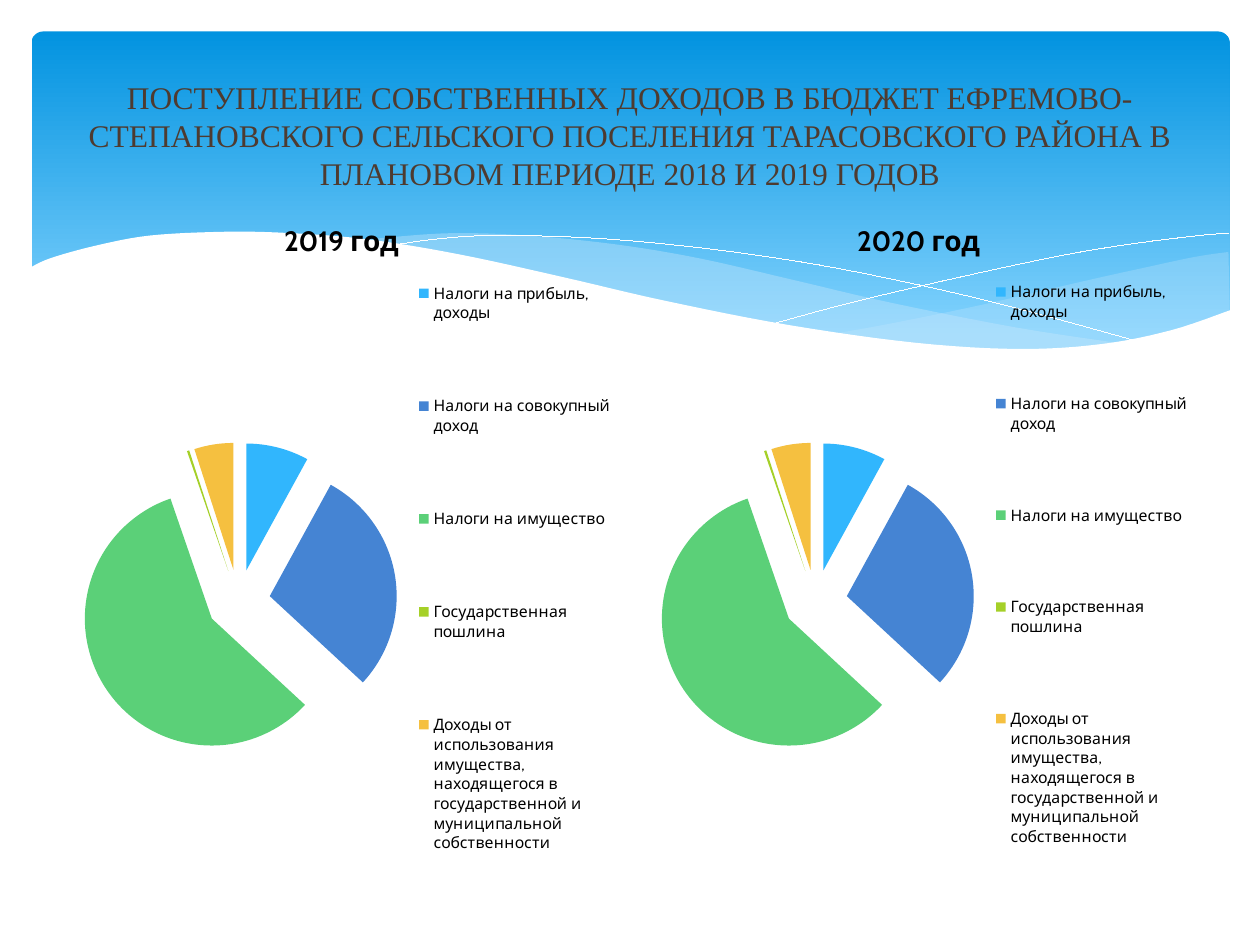
from collections import namedtuple
from lxml.etree import SubElement
from pptx import Presentation
from pptx.chart.data import CategoryChartData
from pptx.dml.color import RGBColor
from pptx.enum.chart import XL_CHART_TYPE as ChartType, XL_LEGEND_POSITION as LegendPosition
from pptx.enum.shapes import MSO_SHAPE as Shape
from pptx.enum.text import MSO_ANCHOR as Anchor, PP_ALIGN as Align
from pptx.oxml.ns import qn
from pptx.util import Inches, Pt

Box = namedtuple("Box", "left top width height")

COLUMNS = 1000
FINENESS = 100
SKY_TOP = RGBColor(0x02, 0x93, 0xE0)
SKY_BOTTOM = RGBColor(0x83, 0xD3, 0xFE)
MIST = RGBColor(0xC6, 0xE7, 0xFC)
WHITE = RGBColor(0xFF, 0xFF, 0xFF)
BLACK = RGBColor(0, 0, 0)
BROWN = RGBColor(0x4E, 0x3B, 0x30)
SLICE_COLORS = [
    RGBColor(0x31, 0xB6, 0xFD), RGBColor(0x45, 0x84, 0xD3), RGBColor(0x5B, 0xD0, 0x78),
    RGBColor(0xA5, 0xD0, 0x28), RGBColor(0xF5, 0xC0, 0x40),
]

TITLE = ("ПОСТУПЛЕНИЕ СОБСТВЕННЫХ ДОХОДОВ В БЮДЖЕТ ЕФРЕМОВО-СТЕПАНОВСКОГО СЕЛЬСКОГО "
         "ПОСЕЛЕНИЯ ТАРАСОВСКОГО РАЙОНА В ПЛАНОВОМ ПЕРИОДЕ 2018 И 2019 ГОДОВ")
INCOME = {
    "Налоги на прибыль, доходы": 8,
    "Налоги на совокупный доход": 29,
    "Налоги на имущество": 58,
    "Государственная пошлина": 0.3,
    "Доходы от использования имущества, находящегося в государственной и "
    "муниципальной собственности": 5,
}
TITLE_FORMAT = {"name": "Times New Roman", "size": Pt(18)}
CHART_FORMAT = {"name": "Cabin", "size": Pt(9), "bold": False}
YEAR_FORMAT = {"name": "Cabin", "size": Pt(16), "bold": True}
PLOT_SHARE = Box(0.03, 0.33, 0.57, 0.44)
LEGEND_SHARES = {
    "2019 год": Box(0.64, 0.02, 0.35, 0.97),
    "2020 год": Box(0.64, 0.02, 0.35, 0.96),
}

RIGHT_RIBBON = [
    [(952, 16), (925, 20), (883, 29), (838, 39), (756, 58), (683, 73), (638, 81)],
    [(638, 81), (696, 88), (758, 93), (812, 93), (866, 88), (912, 78), (953, 63)],
]
LEFT_RIBBON = [
    [(870, 89), (784, 76), (683, 56), (606, 38), (532, 21), (466, 10), (397, 3),
     (338, 1), (290, 4), (263, 7)],
    [(263, 7), (319, 15), (381, 27), (426, 38), (507, 56), (595, 74), (672, 86),
     (750, 93), (825, 93), (870, 89)],
]
LONG_THREAD = [[(286, 11), (321, 6), (364, 3), (427, 4), (487, 8), (559, 16), (642, 29),
                (737, 49), (808, 67), (884, 88)]]
CROSS_THREAD = [[(590, 73), (649, 57), (725, 39), (813, 20), (872, 10), (928, 3), (952, 1)]]
FOOT = [
    [(954, 62), (907, 78), (852, 89), (786, 93), (703, 88), (603, 74), (506, 55), (424, 36),
     (342, 18), (269, 6), (207, 1), (154, 0), (96, 3), (53, 11), (17, 21), (0, 29)],
    [(0, 145), (954, 145)],
]


def apply_format(font, values, color):
    for attribute, value in values.items():
        setattr(font, attribute, value)
    font.color.rgb = color


def smooth(knots, steps=6):
    if len(knots) < 3:
        return knots
    padded = [knots[0], *knots, knots[-1]]
    curve = [knots[0]]
    for a, b, c, d in zip(padded, padded[1:], padded[2:], padded[3:]):
        for step in range(1, steps + 1):
            t = step / steps
            curve.append(tuple(
                (2 * q + (r - p) * t + (2 * p - 5 * q + 4 * r - s) * t ** 2
                 + (3 * q - p - 3 * r + s) * t ** 3) / 2
                for p, q, r, s in zip(a, b, c, d)))
    return curve


def add_wave(slide, box, unit, edges, color, opacity=100, filled=True):
    points = [(x * FINENESS, y * FINENESS) for edge in edges for x, y in smooth(edge)]
    builder = slide.shapes.build_freeform(*points[0], scale=unit / FINENESS)
    builder.add_line_segments(points[1:], close=filled)
    wave = builder.convert_to_shape(round(box.left * unit), round(box.top * unit))
    wave.shadow.inherit = False
    if not filled:
        wave.fill.background()
        wave.line.color.rgb = color
        wave.line.width = Pt(0.01)
        return
    wave.line.fill.background()
    wave.fill.solid()
    wave.fill.fore_color.rgb = color
    if opacity < 100:
        tint = wave.fill._xPr.find(".//" + qn("a:srgbClr"))
        SubElement(tint, qn("a:alpha"), val=str(opacity * 1000))


def add_sky(slide, box, unit):
    sky = slide.shapes.add_shape(Shape.ROUNDED_RECTANGLE, *(round(n * unit) for n in box))
    sky.adjustments[0] = 0.034
    sky.shadow.inherit = False
    sky.line.fill.background()
    sky.fill.gradient()
    sky.fill.gradient_angle = 270
    for stop, color, position in zip(sky.fill.gradient_stops, (SKY_TOP, SKY_BOTTOM), (0, 0.9)):
        stop.color.rgb = color
        stop.position = position


def add_waves(slide, box, unit):
    add_wave(slide, box, unit, RIGHT_RIBBON, MIST, opacity=29)
    add_wave(slide, box, unit, LEFT_RIBBON, MIST, opacity=40)
    for thread in (LONG_THREAD, CROSS_THREAD):
        add_wave(slide, box, unit, thread, WHITE, filled=False)
    add_wave(slide, box, unit, FOOT, WHITE)


def add_title(slide, box, unit):
    frame = slide.shapes.add_textbox(*(round(n * unit) for n in box)).text_frame
    frame.word_wrap = True
    frame.vertical_anchor = Anchor.MIDDLE
    paragraph = frame.paragraphs[0]
    paragraph.alignment = Align.CENTER
    heading = paragraph.add_run()
    heading.text = TITLE
    apply_format(heading.font, TITLE_FORMAT, BROWN)


def set_layout(element, share, inner=False):
    layout = element.find(qn("c:layout"))
    if layout is None:
        layout = element.makeelement(qn("c:layout"))
        element.insert(1 if element.tag == qn("c:legend") else 0, layout)
    manual = SubElement(layout, qn("c:manualLayout"))
    settings = [("layoutTarget", "inner")] if inner else []
    settings += [("xMode", "edge"), ("yMode", "edge"), *zip("xywh", share)]
    for tag, value in settings:
        SubElement(manual, qn("c:" + tag), val=str(value))


def add_income_pie(slide, box, unit, year):
    income = CategoryChartData()
    income.categories = list(INCOME)
    income.add_series(year, list(INCOME.values()))
    chart = slide.shapes.add_chart(
        ChartType.PIE, *(round(n * unit) for n in box), income).chart
    apply_format(chart.font, CHART_FORMAT, BLACK)
    chart.has_title = True
    heading = chart.chart_title.text_frame.paragraphs[0].add_run()
    heading.text = year
    apply_format(heading.font, YEAR_FORMAT, BLACK)
    chart.has_legend = True
    chart.legend.position = LegendPosition.RIGHT
    chart.legend.include_in_layout = False
    set_layout(chart.legend._element, LEGEND_SHARES[year])
    set_layout(chart._chartSpace.chart.plotArea, PLOT_SHARE, inner=True)
    pie = chart.plots[0]
    pie.vary_by_categories = True
    series = pie.series[0]
    for index, color in enumerate(SLICE_COLORS):
        part = series.points[index].format
        part.fill.solid()
        part.fill.fore_color.rgb = color
        part.line.fill.background()
    explosion = series._element.makeelement(qn("c:explosion"), val="25")
    series._element.find(qn("c:dPt")).addprevious(explosion)


def main():
    deck = Presentation()
    deck.slide_width, deck.slide_height = Inches(10), Inches(7.5)
    unit = deck.slide_width / COLUMNS
    slide = deck.slides.add_slide(deck.slide_layouts[6])
    add_sky(slide, Box(25, 25, 951, 270), unit)
    add_waves(slide, Box(23, 184, 954, 145), unit)
    add_title(slide, Box(50, 52, 900, 110), unit)
    for left, year in zip((50, 508), LEGEND_SHARES):
        add_income_pie(slide, Box(left, 155, 442, 586), unit, year)
    deck.save("out.pptx")


if __name__ == "__main__":
    main()
